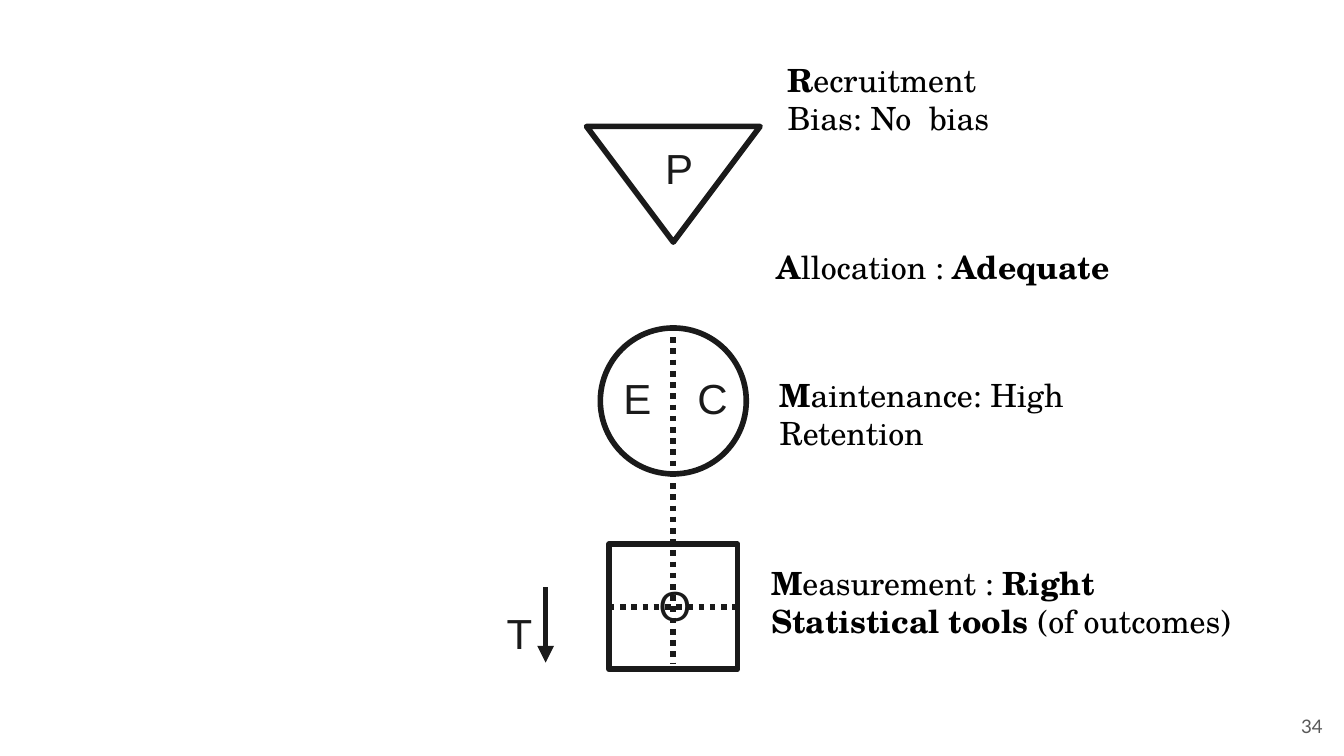
from lxml.etree import SubElement
from pptx import Presentation
from pptx.dml.color import RGBColor
from pptx.enum.dml import MSO_LINE
from pptx.enum.shapes import MSO_CONNECTOR, MSO_SHAPE
from pptx.enum.text import MSO_ANCHOR, PP_ALIGN
from pptx.oxml.ns import qn
from pptx.util import Pt

COLORS = {"ink": "1A1A1A", "text": "000000", "number": "595959"}
CENTER = 360.7


def color(name):
    """Return a named colour."""
    return RGBColor.from_string(COLORS[name])


def add_outline(page, kind, top, width, height, rotation=0):
    """Draw an unfilled shape centred on the diagram's axis."""
    shape = page.shapes.add_shape(kind, Pt(CENTER - width / 2), Pt(top), Pt(width), Pt(height))
    shape.shadow.inherit = False
    shape.rotation = rotation
    shape.fill.background()
    shape.line.color.rgb = color("ink")
    shape.line.width = Pt(3)
    return shape


def add_line(page, start, end, dotted=False, arrow=False):
    """Draw a straight line, dotted or with an arrowhead."""
    line = page.shapes.add_connector(MSO_CONNECTOR.STRAIGHT, *map(Pt, start + end))
    line.line.color.rgb = color("ink")
    line.line.width = Pt(3)
    if dotted:
        line.line.dash_style = MSO_LINE.ROUND_DOT
    if arrow:
        SubElement(line.line._get_or_add_ln(), qn("a:tailEnd"), type="triangle")
    SubElement(line._element.spPr, qn("a:effectLst"))
    return line


def add_text(page, area, paragraphs, font, size, shade, margins=(5, 3)):
    """Write paragraphs of (text, bold) spans in a wrapping box."""
    box = page.shapes.add_textbox(*map(Pt, area))
    frame = box.text_frame
    frame.word_wrap = True
    frame.margin_left = frame.margin_right = Pt(margins[0])
    frame.margin_top = frame.margin_bottom = Pt(margins[1])
    for index, spans in enumerate(paragraphs):
        para = frame.add_paragraph() if index else frame.paragraphs[0]
        for text, bold in spans:
            span = para.add_run()
            span.text = text
            span.font.name = font
            span.font.size = Pt(size)
            span.font.bold = bold
            span.font.color.rgb = color(shade)
    return frame


def add_letter(page, letter, left, top):
    """Label a part of the diagram with one letter."""
    add_text(page, (left, top, 28, 32), [[(letter, False)]], "Arial", 22.5, "ink")


def add_note(page, left, top, width, height, *paragraphs):
    """Write a criterion beside the diagram."""
    add_text(page, (left, top, width, height), paragraphs, "TeX Gyre Schola", 17.1, "text")


def add_page_number(page, number):
    """Write the page number at the lower right."""
    area = (672.5, 373.7, 43.2, 31)
    frame = add_text(page, area, [[(number, False)]], "Lato", 10, "number", (7.2, 7.2))
    frame.vertical_anchor = MSO_ANCHOR.MIDDLE
    frame.paragraphs[0].alignment = PP_ALIGN.RIGHT


def main():
    """Build the slide and save it."""
    deck = Presentation()
    deck.slide_width, deck.slide_height = Pt(720), Pt(405)
    page = deck.slides.add_slide(deck.slide_layouts[6])

    add_outline(page, MSO_SHAPE.OVAL, 175.7, 78.2, 78.2)
    square = add_outline(page, MSO_SHAPE.RECTANGLE, 291.6, 69, 67)
    add_line(page, (CENTER, 180.7), (CENTER, 355.7), dotted=True)
    add_outline(page, MSO_SHAPE.ISOSCELES_TRIANGLE, 67.7, 93, 62, rotation=180)
    divider = add_line(page, (326, 325), (395, 325), dotted=True)
    divider.begin_connect(square, 1)
    divider.end_connect(square, 3)
    add_line(page, (292.3, 314.6), (292.3, 355), arrow=True)

    for letter, left, top in (("P", 351.4, 73.4), ("E", 329, 196.6), ("C", 368.6, 196.6),
                              ("O", 347.8, 307.4), ("T", 266.4, 322.6)):
        add_letter(page, letter, left, top)

    add_note(page, 416.9, 29.5, 186.5, 46.8,
             [("R", True), ("ecruitment", False)], [("Bias: No  bias", False)])
    add_note(page, 411.1, 129.6, 196.6, 46.8,
             [("A", True), ("llocation : ", False), ("Adequate", True)])
    add_note(page, 412.6, 198, 238.3, 67,
             [("M", True), ("aintenance: High Retention", False)])
    add_note(page, 408.2, 298.8, 270.7, 46.8,
             [("M", True), ("easurement : ", False),
              ("Right Statistical tools ", True), ("(of outcomes)", False)])
    add_page_number(page, "34")
    deck.save("out.pptx")


if __name__ == "__main__":
    main()
